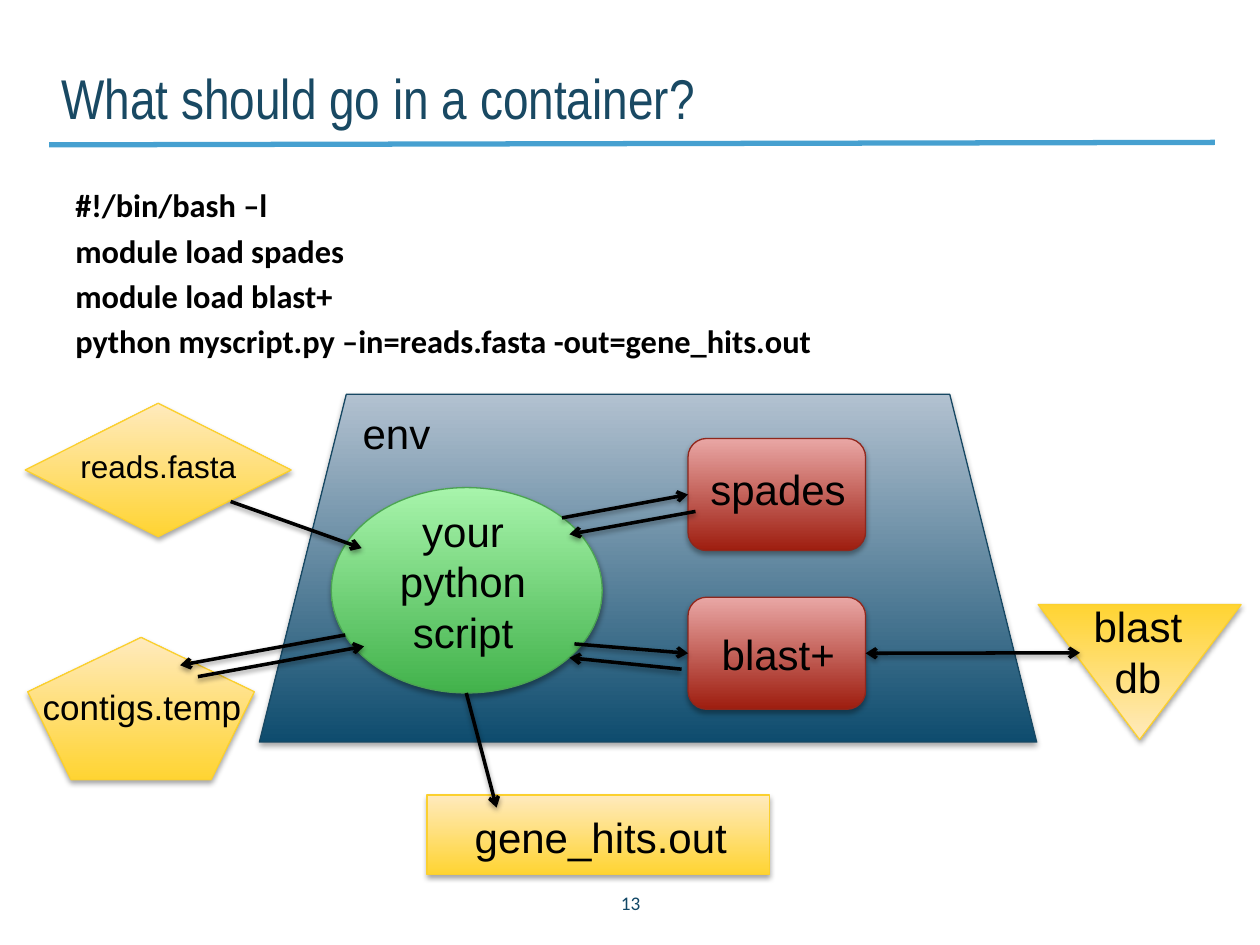
import pptx
import pptx.util
import pptx.dml.color
import pptx.enum.shapes
import pptx.enum.text
import pptx.oxml.ns
from lxml import etree

Cm, Pt = pptx.util.Cm, pptx.util.Pt
RGB = pptx.dml.color.RGBColor.from_string
qn = pptx.oxml.ns.qn
KIND = pptx.enum.shapes.MSO_SHAPE
STRAIGHT = pptx.enum.shapes.MSO_CONNECTOR.STRAIGHT
ANCHOR = pptx.enum.text.MSO_ANCHOR
ALIGN = pptx.enum.text.PP_ALIGN

COLORS = {"ink": "000000", "title": "194963", "number": "114766", "rule": "46A0D0"}
# dark end, light end, outline
PALETTES = {
    "blue": ("0E4C6E", "B2C1D0", "174863"),
    "green": ("42B24B", "A7F4AB", "4BA352"),
    "red": ("9E1D0F", "E9A7A5", "8E271D"),
    "yellow": ("FFD432", "FFEABD", "FBD02F"),
}


def write_text(place, lines, font, size, color="ink", align=ALIGN.LEFT,
               anchor=ANCHOR.TOP, wrap=True, bold=False, gap=0):
    """Add a text box with one paragraph per line, gap points apart."""
    box = page.shapes.add_textbox(*map(Cm, place))
    frame = box.text_frame
    frame.word_wrap = wrap
    frame.vertical_anchor = anchor
    if not wrap:
        frame.auto_size = pptx.enum.text.MSO_AUTO_SIZE.SHAPE_TO_FIT_TEXT
    for index, line in enumerate(lines):
        para = frame.add_paragraph() if index else frame.paragraphs[0]
        para.alignment = align
        if index and gap:
            para.space_before = Pt(gap)
        span = para.add_run()
        span.text = line
        span.font.name, span.font.size, span.font.bold = font, Pt(size), bold
        span.font.color.rgb = RGB(COLORS[color])
    return box


def set_shadow(item, distance=None, opacity=0):
    """Replace the theme shadow by a soft one below, or by none."""
    effects = etree.SubElement(item.element.spPr, qn("a:effectLst"))
    if distance:
        shadow = etree.SubElement(effects, qn("a:outerShdw"), blurRad=str(Pt(3.1)),
                                  dist=str(Pt(distance)), dir="5400000", rotWithShape="0")
        tone = etree.SubElement(shadow, qn("a:srgbClr"), val=COLORS["ink"])
        etree.SubElement(tone, qn("a:alpha"), val=str(opacity * 1000))


deck = pptx.Presentation()
deck.slide_width, deck.slide_height = Cm(25.4), Cm(19.05)
page = deck.slides.add_slide(deck.slide_layouts[6])

# Heading, commands and page number
rule = page.shapes.add_connector(STRAIGHT, Cm(0.99), Cm(2.92), Cm(24.49), Cm(2.87))
rule.line.color.rgb = RGB(COLORS["rule"])
rule.line.width = Pt(3)
set_shadow(rule)

title = write_text((0.99, 0.51, 18.95, 2.13), ["What should go in a container?"],
                   "Arial Narrow", 32, "title", anchor=ANCHOR.BOTTOM)
title.text_frame.margin_top = title.text_frame.margin_bottom = 0
indent = title.text_frame.paragraphs[0]._p.get_or_add_pPr()
indent.set("marL", str(Cm(0.64)))
indent.set("indent", str(-Cm(0.64)))

commands = [
    "#!/bin/bash –l",
    "module load spades",
    "module load blast+",
    "python myscript.py –in=reads.fasta -out=gene_hits.out",
]
write_text((1.27, 3.61, 18.67, 3.61), commands, "Calibri", 18.5, bold=True, gap=3.7)
write_text((11.43, 17.7, 2.57, 1.02), ["13"], "Calibri", 11, "number",
           ALIGN.CENTER, ANCHOR.MIDDLE)

# Container, programs inside it and files outside it
nodes = {}
for name, kind, palette, place in [
    ("env", KIND.TRAPEZOID, "blue", (5.23, 7.95, 15.67, 7.01)),
    ("script", KIND.OVAL, "green", (6.68, 9.83, 5.46, 4.14)),
    ("spades", KIND.ROUNDED_RECTANGLE, "red", (13.87, 8.84, 3.58, 2.26)),
    ("blast", KIND.ROUNDED_RECTANGLE, "red", (13.87, 12.04, 3.58, 2.26)),
    ("database", KIND.ISOSCELES_TRIANGLE, "yellow", (20.93, 12.19, 4.09, 2.72)),
    ("reads", KIND.DIAMOND, "yellow", (0.51, 8.13, 5.36, 2.69)),
    ("contigs", KIND.REGULAR_PENTAGON, "yellow", (0.56, 12.85, 4.57, 2.87)),
    ("hits", KIND.RECTANGLE, "yellow", (8.61, 16.03, 6.91, 1.6)),
]:
    node = nodes[name] = page.shapes.add_shape(kind, *map(Cm, place))
    dark, light, outline = PALETTES[palette]
    node.fill.gradient()
    node.fill.gradient_angle = 90
    for stop, color in zip(node.fill.gradient_stops, (dark, light)):
        stop.color.rgb = RGB(color)
    node.line.color.rgb = RGB(outline)
    node.line.width = Pt(0.75)
    set_shadow(node, 1.8, 35)
nodes["database"].element.spPr.find(qn("a:xfrm")).set("flipV", "1")

for lines, size, place in [
    (["env"], 24, (7.06, 8.1, 1.91, 1.27)),
    (["your", "python", "script"], 24, (7.8, 10.06, 3.07, 3.33)),
    (["spades"], 24, (14.07, 9.22, 3.28, 1.27)),
    (["blast+"], 24, (14.3, 12.55, 2.82, 1.27)),
    (["blast", "db"], 24, (21.77, 11.99, 2.34, 2.31)),
    (["reads.fasta"], 18, (1.37, 8.89, 3.68, 1.02)),
    (["contigs.temp"], 20, (0.61, 13.69, 4.55, 1.12)),
    (["gene_hits.out"], 24, (9.32, 16.23, 5.64, 1.27)),
]:
    align = ALIGN.CENTER if len(lines) > 1 else ALIGN.LEFT
    write_text(place, lines, "Arial", size, align=align, wrap=False)

# Data flow: ends, joined start, joined end, arrowheads
for ends, start, finish, heads in [
    ((11.33, 10.44, 13.87, 9.97), None, ("spades", 1), ["tailEnd"]),
    ((14.02, 10.31, 11.48, 10.77), None, None, ["tailEnd"]),
    ((17.45, 13.17, 21.77, 13.16), ("blast", 3), None, ["headEnd", "tailEnd"]),
    ((11.58, 12.98, 13.87, 13.17), None, ("blast", 1), ["tailEnd"]),
    ((13.74, 13.49, 11.48, 13.26), None, None, ["tailEnd"]),
    ((4.65, 10.11, 7.29, 11.05), None, None, ["tailEnd"]),
    ((6.96, 12.8, 3.63, 13.41), None, None, ["tailEnd"]),
    ((3.99, 13.64, 7.34, 13.03), None, None, ["tailEnd"]),
    ((9.4, 13.97, 10.01, 16.28), None, None, ["tailEnd"]),
]:
    arrow = page.shapes.add_connector(STRAIGHT, *map(Cm, ends))
    if start:
        arrow.begin_connect(nodes[start[0]], start[1])
    if finish:
        arrow.end_connect(nodes[finish[0]], finish[1])
    arrow.line.color.rgb = RGB(COLORS["ink"])
    arrow.line.width = Pt(2)
    stroke = arrow.element.spPr.find(qn("a:ln"))
    for head in heads:
        etree.SubElement(stroke, qn("a:" + head), type="arrow")
    set_shadow(arrow, 1.6, 38)

deck.save("out.pptx")
